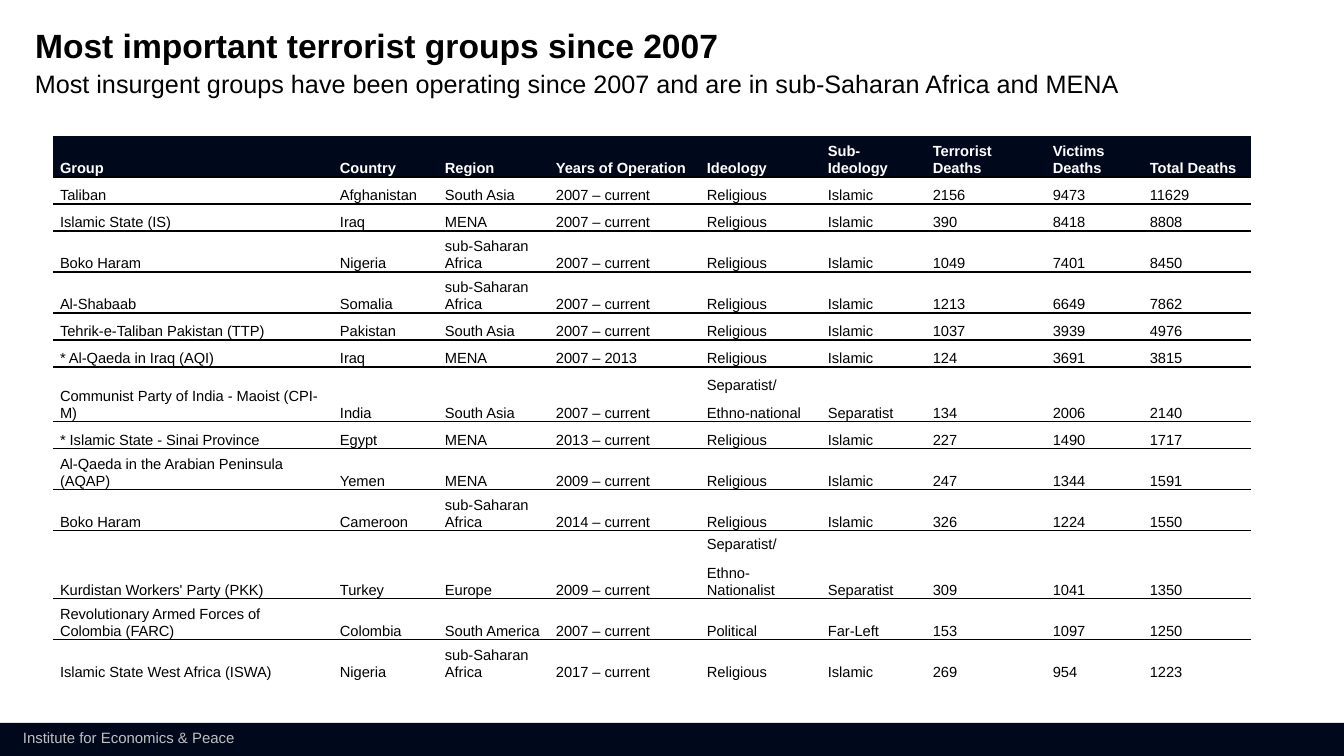
from lxml import etree
from pptx import Presentation
from pptx.dml.color import RGBColor
from pptx.enum.shapes import MSO_SHAPE
from pptx.enum.text import MSO_ANCHOR, MSO_AUTO_SIZE, PP_ALIGN
from pptx.oxml.ns import qn
from pptx.util import Pt

RECTANGLE = MSO_SHAPE.RECTANGLE
BOTTOM = MSO_ANCHOR.BOTTOM
GROW = MSO_AUTO_SIZE.SHAPE_TO_FIT_TEXT
FIXED = MSO_AUTO_SIZE.NONE
JUSTIFY = PP_ALIGN.JUSTIFY
PLAIN_TABLE = "{2D5ABB26-0587-4C30-8999-92F81FD0307C}"

NAVY, BLACK, WHITE, GREY = "00081C", "000000", "FFFFFF", "BFBFBF"

HEADINGS = ["Group", "Country", "Region", "Years of Operation", "Ideology",
            "Sub-Ideology", "Terrorist Deaths", "Victims Deaths", "Total Deaths"]
COLUMN_WIDTHS = [280, 105, 111, 151, 121, 105, 120, 97, 108]
ONE_LINE, TWO_LINES, SPLIT_IDEOLOGY = 27, 41, 55
ROW_HEIGHTS = [TWO_LINES, ONE_LINE, ONE_LINE, TWO_LINES, TWO_LINES, ONE_LINE, ONE_LINE,
               SPLIT_IDEOLOGY, ONE_LINE, TWO_LINES, TWO_LINES, SPLIT_IDEOLOGY,
               TWO_LINES, TWO_LINES]
AFRICA = "sub-Saharan Africa"
JIHADIST = ("Religious", "Islamic")
GROUPS = [
    ("Taliban", "Afghanistan", "South Asia", "2007 – current", *JIHADIST, 2156, 9473, 11629),
    ("Islamic State (IS)", "Iraq", "MENA", "2007 – current", *JIHADIST, 390, 8418, 8808),
    ("Boko Haram", "Nigeria", AFRICA, "2007 – current", *JIHADIST, 1049, 7401, 8450),
    ("Al-Shabaab", "Somalia", AFRICA, "2007 – current", *JIHADIST, 1213, 6649, 7862),
    ("Tehrik-e-Taliban Pakistan (TTP)", "Pakistan", "South Asia", "2007 – current",
     *JIHADIST, 1037, 3939, 4976),
    ("* Al-Qaeda in Iraq (AQI)", "Iraq", "MENA", "2007 – 2013", *JIHADIST, 124, 3691, 3815),
    ("Communist Party of India - Maoist (CPI-M)", "India", "South Asia", "2007 – current",
     "Separatist/\nEthno-national", "Separatist", 134, 2006, 2140),
    ("* Islamic State - Sinai Province", "Egypt", "MENA", "2013 – current",
     *JIHADIST, 227, 1490, 1717),
    ("Al-Qaeda in the Arabian Peninsula (AQAP)", "Yemen", "MENA", "2009 – current",
     *JIHADIST, 247, 1344, 1591),
    ("Boko Haram", "Cameroon", AFRICA, "2014 – current", *JIHADIST, 326, 1224, 1550),
    ("Kurdistan Workers' Party (PKK)", "Turkey", "Europe", "2009 – current",
     "Separatist/\nEthno-Nationalist", "Separatist", 309, 1041, 1350),
    ("Revolutionary Armed Forces of Colombia (FARC)", "Colombia", "South America",
     "2007 – current", "Political", "Far-Left", 153, 1097, 1250),
    ("Islamic State West Africa (ISWA)", "Nigeria", AFRICA, "2017 – current",
     *JIHADIST, 269, 954, 1223),
]


def px(length):
    return round(length * 914400 / 100.8)


def rgb(color):
    return RGBColor.from_string(color)


class SlideBuilder:
    font = "Arial"

    def __init__(self, slide):
        self.slide = slide

    def style_runs(self, frame, size, color, bold=False):
        for paragraph in frame.paragraphs:
            for run in paragraph.runs:
                run.font.name = self.font
                run.font.size = Pt(size)
                run.font.bold = bold
                run.font.color.rgb = rgb(color)

    def bar(self, left, top, width, height, color):
        bar = self.slide.shapes.add_shape(
            RECTANGLE, px(left), px(top), px(width), px(height))
        bar.shadow.inherit = False
        bar.fill.solid()
        bar.fill.fore_color.rgb = rgb(color)
        bar.line.fill.background()

    def text(self, box, words, size, color, bold=False, wrap=True, grow=True):
        frame = self.slide.shapes.add_textbox(*map(px, box)).text_frame
        frame.text = words
        frame.word_wrap = wrap
        frame.auto_size = GROW if grow else FIXED
        self.style_runs(frame, size, color, bold)
        return frame

    def rule_below(self, cell):
        properties = cell._tc.get_or_add_tcPr()
        rule = etree.Element(qn("a:lnB"), w=str(Pt(1)))
        fill = etree.SubElement(rule, qn("a:solidFill"))
        etree.SubElement(fill, qn("a:srgbClr"), val=BLACK)
        properties.insert(0, rule)

    def cell(self, cell, words, header):
        cell.margin_left = cell.margin_right = px(7)
        cell.margin_top = cell.margin_bottom = 0
        cell.vertical_anchor = BOTTOM
        if header:
            cell.fill.solid()
            cell.fill.fore_color.rgb = rgb(NAVY)
        else:
            cell.fill.background()
        frame = cell.text_frame
        frame.text = str(words)
        for paragraph in frame.paragraphs:
            paragraph.line_spacing = 1.07
            paragraph.space_after = Pt(8)
        self.style_runs(frame, 10.5, WHITE if header else BLACK, header)

    def table(self, left, top, rows, widths, heights):
        table = self.slide.shapes.add_table(
            len(rows), len(widths), px(left), px(top),
            px(sum(widths)), px(sum(heights))).table
        table._tbl.tblPr.find(qn("a:tableStyleId")).text = PLAIN_TABLE
        table.horz_banding = False
        for column, width in zip(table.columns, widths):
            column.width = px(width)
        for row, height in zip(table.rows, heights):
            row.height = px(height)
        for r, values in enumerate(rows):
            for c, value in enumerate(values):
                cell = table.cell(r, c)
                self.cell(cell, value, header=r == 0)
                if r < len(rows) - 1:
                    self.rule_below(cell)
        return table


def main():
    deck = Presentation()
    deck.slide_width, deck.slide_height = px(1344), px(756)
    builder = SlideBuilder(deck.slides.add_slide(deck.slide_layouts[6]))

    # Footer
    builder.bar(0, 723, 1344, 33, NAVY)
    builder.text((13, 724, 234, 28), "Institute for Economics & Peace", 10.7, GREY, wrap=False)

    # Title and subtitle
    title = builder.text((35, 29, 1132, 40), "Most important terrorist groups since 2007",
                         24, BLACK, bold=True, grow=False)
    title.margin_left = title.margin_right = title.margin_top = title.margin_bottom = 0
    title.paragraphs[0].line_spacing = 0.9
    builder.text((25, 63, 1188, 40),
                 "Most insurgent groups have been operating since 2007 "
                 "and are in sub-Saharan Africa and MENA", 18, BLACK)

    # Table of groups
    groups = builder.table(53, 136, [HEADINGS, *GROUPS], COLUMN_WIDTHS, ROW_HEIGHTS)
    groups.cell(0, 0).text_frame.paragraphs[0].alignment = JUSTIFY

    deck.save("out.pptx")


if __name__ == "__main__":
    main()
